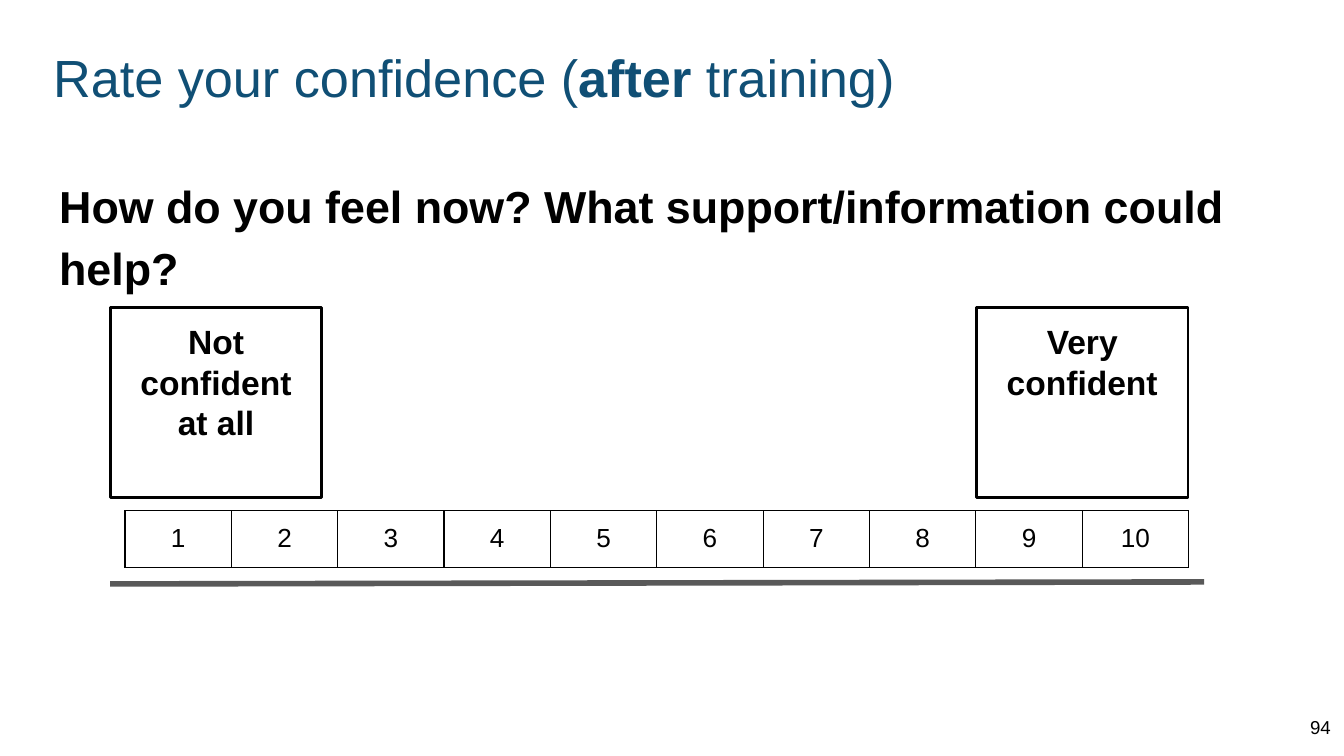
from dataclasses import dataclass

from lxml import etree
from pptx import Presentation
from pptx.dml.color import RGBColor
from pptx.enum.shapes import MSO_CONNECTOR, MSO_SHAPE
from pptx.enum.text import MSO_ANCHOR, MSO_AUTO_SIZE, PP_ALIGN
from pptx.oxml.ns import qn
from pptx.util import Pt

EMU_PER_PX = 4572
LEFT, CENTER, RIGHT = PP_ALIGN.LEFT, PP_ALIGN.CENTER, PP_ALIGN.RIGHT
TOP, MIDDLE = MSO_ANCHOR.TOP, MSO_ANCHOR.MIDDLE
NO_AUTO_SIZE = MSO_AUTO_SIZE.NONE
RECTANGLE = MSO_SHAPE.RECTANGLE
STRAIGHT = MSO_CONNECTOR.STRAIGHT

BLACK = "000000"
TITLE_BLUE = "104F75"
SCALE_GRAY = "595959"
INSET = 20
SCALE_STEPS = 10
BOX_TOP, BOX_WIDTH, BOX_HEIGHT = 458, 315, 283


@dataclass
class Run:
    text: str
    bold: bool = False


@dataclass
class ScaleEnd:
    left: int
    label: str


SCALE_ENDS = [ScaleEnd(164, "Not confident at all"), ScaleEnd(1453, "Very confident")]


def px(length: int) -> int:
    return length * EMU_PER_PX


def color(value: str) -> RGBColor:
    return RGBColor.from_string(value)


def set_attributes(target, values: dict) -> None:
    for name, value in values.items():
        setattr(target, name, value)


def place(shape, left: int, top: int, width: int, height: int) -> None:
    set_attributes(shape, {"left": px(left), "top": px(top),
                           "width": px(width), "height": px(height)})


def insets() -> dict:
    return {f"margin_{side}": px(INSET) for side in ("left", "top", "right", "bottom")}


def write(text_frame, runs: list[Run], size: int, text_color: str = BLACK,
          align=LEFT, spacing: float = 1.0) -> None:
    paragraph = text_frame.paragraphs[0]
    set_attributes(paragraph, {"alignment": align, "line_spacing": spacing,
                               "space_before": Pt(0), "space_after": Pt(0)})
    for item in runs:
        run = paragraph.add_run()
        run.text = item.text
        set_attributes(run.font, {"name": "Arial", "size": Pt(size), "bold": item.bold})
        run.font.color.rgb = color(text_color)


def format_frame(text_frame, anchor=TOP) -> None:
    set_attributes(text_frame, {"word_wrap": True, "auto_size": NO_AUTO_SIZE,
                                "vertical_anchor": anchor, **insets()})


def remove_bullet(paragraph) -> None:
    properties = paragraph._p.get_or_add_pPr()
    properties.set("marL", "0")
    properties.set("indent", "0")
    etree.SubElement(properties, qn("a:buNone"))


def add_scale_end(slide, end: ScaleEnd) -> None:
    box = slide.shapes.add_shape(RECTANGLE, px(end.left), px(BOX_TOP),
                                 px(BOX_WIDTH), px(BOX_HEIGHT))
    box.shadow.inherit = False
    box.fill.background()
    box.line.color.rgb = color(BLACK)
    box.line.width = Pt(1.5)
    format_frame(box.text_frame)
    write(box.text_frame, [Run(end.label, True)], 18, align=CENTER)


def add_cell_borders(cell) -> None:
    properties = cell._tc.get_or_add_tcPr()
    for index, side in enumerate(("lnL", "lnR", "lnT", "lnB")):
        border = etree.Element(qn(f"a:{side}"), w=str(Pt(0.75)))
        fill = etree.SubElement(border, qn("a:solidFill"))
        etree.SubElement(fill, qn("a:srgbClr"), val=BLACK)
        properties.insert(index, border)


def add_rating_table(slide) -> None:
    frame = slide.shapes.add_table(1, SCALE_STEPS, px(186), px(760), px(1583), px(85))
    table = frame.table
    set_attributes(table, {"first_row": False, "horz_banding": False})
    for step in range(SCALE_STEPS):
        cell = table.cell(0, step)
        set_attributes(cell, {"vertical_anchor": TOP, **insets()})
        cell.fill.background()
        add_cell_borders(cell)
        write(cell.text_frame, [Run(str(step + 1))], 14, align=CENTER)


def add_scale_line(slide) -> None:
    line = slide.shapes.add_connector(STRAIGHT, px(164), px(869), px(1792), px(866))
    line.line.color.rgb = color(SCALE_GRAY)
    line.line.width = Pt(3)
    etree.SubElement(line._element.spPr, qn("a:effectLst"))


def main() -> None:
    presentation = Presentation()
    set_attributes(presentation, {"slide_width": px(2000), "slide_height": px(1125)})
    slide = presentation.slides.add_slide(presentation.slide_layouts[1])

    title = slide.shapes.title
    place(title, 59, 48, 1872, 126)
    format_frame(title.text_frame)
    write(title.text_frame,
          [Run("Rate your confidence ("), Run("after", True), Run(" training)")],
          28, TITLE_BLUE)

    body = slide.placeholders[1]
    place(body, 68, 234, 1864, 766)
    format_frame(body.text_frame)
    write(body.text_frame,
          [Run("How do you feel now? What support/information could help?", True)],
          24, spacing=1.15)
    remove_bullet(body.text_frame.paragraphs[0])

    add_scale_line(slide)
    for end in SCALE_ENDS:
        add_scale_end(slide, end)
    add_rating_table(slide)

    page_number = slide.shapes.add_textbox(px(1880), px(1039), px(120), px(86))
    format_frame(page_number.text_frame, MIDDLE)
    write(page_number.text_frame, [Run("94")], 10, align=RIGHT)

    presentation.save("out.pptx")


if __name__ == "__main__":
    main()
